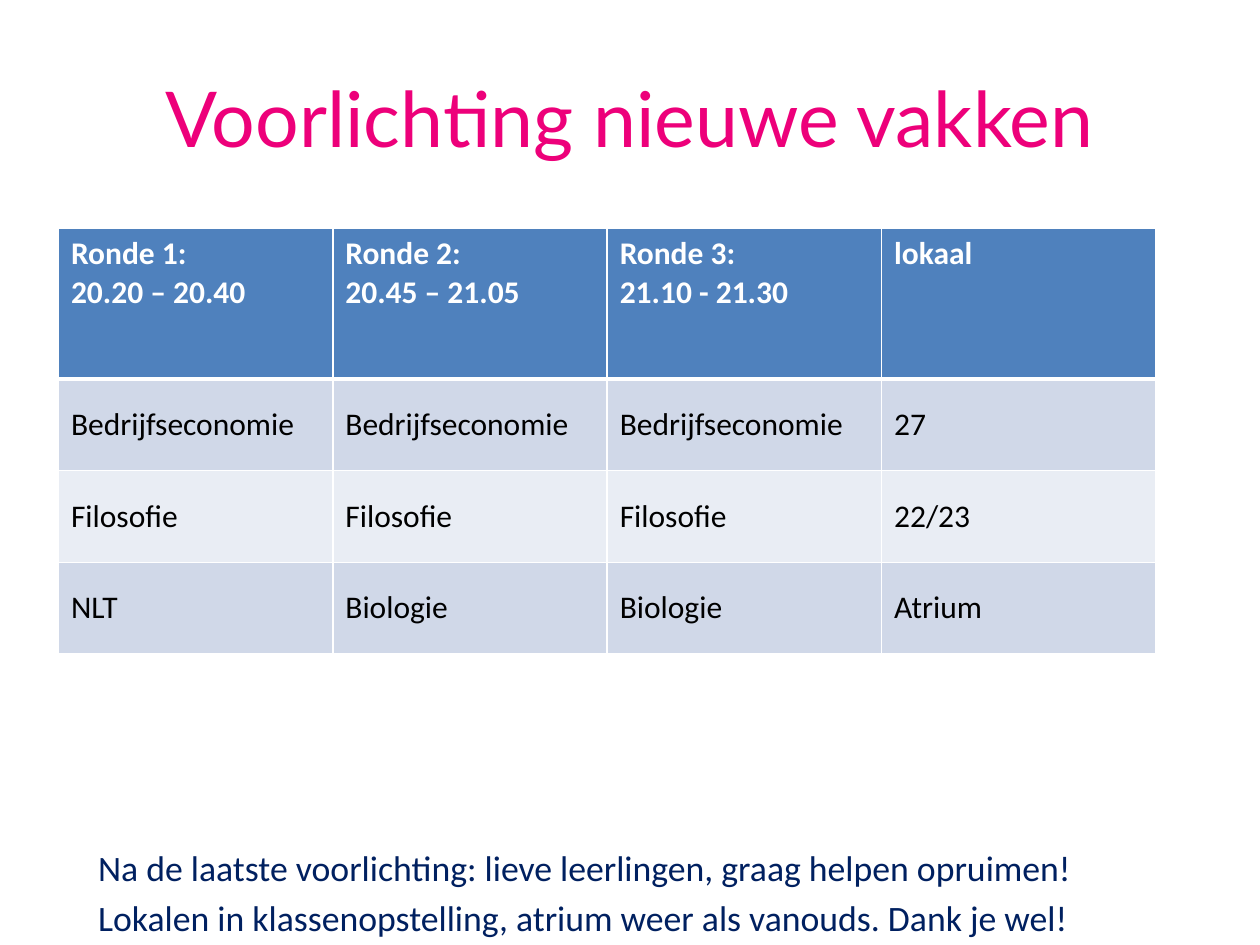
from dataclasses import dataclass

from lxml import etree
from pptx import Presentation
from pptx import util as u
from pptx.dml import color
from pptx.enum import text
from pptx.oxml import ns

HUES = {"title": "ED007A", "note": "002060", "head": "4F81BD", "odd": "D0D8E8",
        "even": "E9EDF4", "white": "FFFFFF", "black": "000000"}
TITLE = {"name": "Lato", "size": u.Pt(44)}
NOTE = {"name": "Calibri", "size": u.Pt(20.4)}
HEAD = {"name": "Calibri", "size": u.Pt(18), "bold": True}
BODY = {**HEAD, "bold": False}
TOP, MID = text.MSO_ANCHOR.TOP, text.MSO_ANCHOR.MIDDLE
LEFT, MIDST = text.PP_ALIGN.LEFT, text.PP_ALIGN.CENTER
SUBJECT = "Bedrijfseconomie"
ROWS = [
    ["Ronde 1:\n20.20 – 20.40", "Ronde 2:\n20.45 – 21.05",
     "Ronde 3:\n21.10 - 21.30", "lokaal"],
    [SUBJECT] * 3 + ["27"],
    ["Filosofie"] * 3 + ["22/23"],
    ["NLT", "Biologie", "Biologie", "Atrium"],
]


@dataclass
class Box:
    left: float
    top: float
    width: float
    height: float
    lines: str
    font: dict
    hue: str
    align: int = LEFT
    anchor: int = TOP
    gap: float = 0

    def frame(self) -> list:
        return [u.Pt(n) for n in (self.left, self.top, self.width, self.height)]


def write(frame, lines: str, font: dict, hue: str, align=LEFT, gap: float = 0) -> None:
    for i, line in enumerate(lines.split("\n")):
        para = frame.add_paragraph() if i else frame.paragraphs[0]
        para.alignment = align
        para.space_before = u.Pt(gap if i else 0)
        run = para.add_run()
        run.text = line
        for key, value in font.items():
            setattr(run.font, key, value)
        run.font.color.rgb = color.RGBColor.from_string(HUES[hue])


def draw_box(slide, box: Box) -> None:
    frame = slide.shapes.add_textbox(*box.frame()).text_frame
    frame.word_wrap = True
    frame.vertical_anchor = box.anchor
    write(frame, box.lines, box.font, box.hue, box.align, box.gap)


def edge(cell, side: str, width: float) -> None:
    props = cell._tc.get_or_add_tcPr()
    line = etree.SubElement(props, ns.qn(f"a:ln{side}"), w=str(u.Pt(width)))
    fill = etree.SubElement(line, ns.qn("a:solidFill"))
    etree.SubElement(fill, ns.qn("a:srgbClr"), val=HUES["white"])


def draw_table(slide, left: float, top: float, width: float, highs: list) -> None:
    size = [u.Pt(n) for n in (left, top, width, sum(highs))]
    table = slide.shapes.add_table(len(ROWS), len(ROWS[0]), *size).table
    for r, (row, high) in enumerate(zip(ROWS, highs)):
        table.rows[r].height = u.Pt(high)
        for c, words in enumerate(row):
            cell = table.cell(r, c)
            for side in "LRTB":
                thick = (r, side) in ((0, "B"), (1, "T"))
                edge(cell, side, 3 if thick else 1)
            cell.fill.solid()
            shade = "odd" if r % 2 else "even" if r else "head"
            cell.fill.fore_color.rgb = color.RGBColor.from_string(HUES[shade])
            cell.vertical_anchor = MID if r else TOP
            write(cell.text_frame, words, BODY if r else HEAD, "black" if r else "white")


def main() -> None:
    """Build the slide with the rounds of the information evening."""
    deck = Presentation()
    deck.slide_width, deck.slide_height = u.Pt(720), u.Pt(540)
    slide = deck.slides.add_slide(deck.slide_layouts[6])
    draw_box(slide, Box(36, 21.6, 648, 90, "Voorlichting nieuwe vakken",
                        TITLE, "title", MIDST, MID))
    draw_box(slide, Box(49, 480, 637, 58,
                        "Na de laatste voorlichting: lieve leerlingen, graag helpen opruimen!\n"
                        "Lokalen in klassenopstelling, atrium weer als vanouds. Dank je wel!",
                        NOTE, "note", gap=4))
    draw_table(slide, 33.4, 130.6, 627.2, [86] + [52.4] * 3)
    deck.save("out.pptx")


if __name__ == "__main__":
    main()
